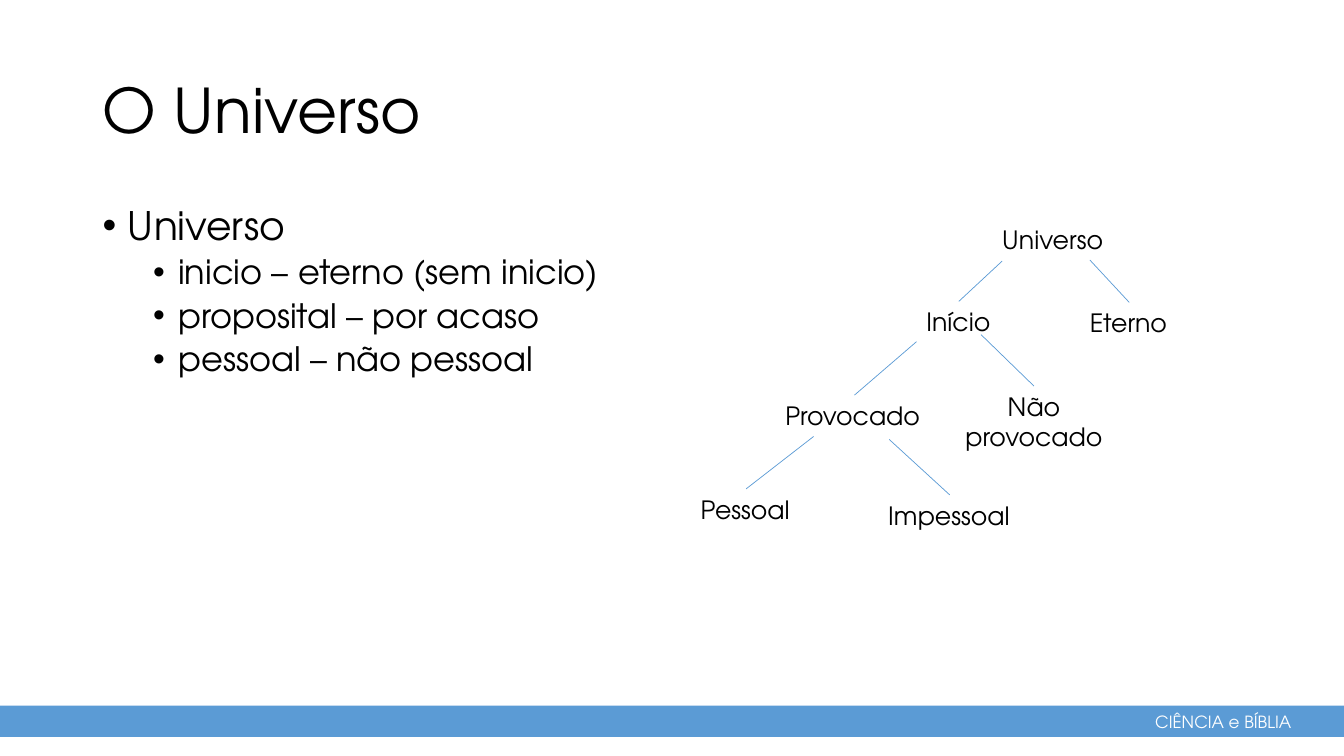
from pptx import Presentation
from pptx.dml.color import RGBColor
from pptx.enum.shapes import MSO_CONNECTOR as CONN, MSO_SHAPE as SHAPE
from pptx.enum.text import MSO_ANCHOR as ANCHOR, MSO_AUTO_SIZE as AUTO, PP_ALIGN as ALIGN
from pptx.oxml.ns import qn
from pptx.util import Inches, Pt
from lxml import etree

BLUE = RGBColor(0x5B, 0x9B, 0xD5)
BLACK = RGBColor(0, 0, 0)
WHITE = RGBColor(0xFF, 0xFF, 0xFF)
FONT = "TeX Gyre Adventor"


def style(p, size, color=BLACK, align=ALIGN.LEFT):
    p.alignment = align
    for r in p.runs:
        r.font.name, r.font.size, r.font.color.rgb = FONT, Pt(size), color


def add_label(text, x, y, w, h, size=18, color=BLACK, align=ALIGN.LEFT):
    sp = slide.shapes.add_textbox(Inches(x), Inches(y), Inches(w), Inches(h))
    tf = sp.text_frame
    tf.word_wrap = False
    tf.auto_size = AUTO.SHAPE_TO_FIT_TEXT
    tf.text = text
    for p in tf.paragraphs:
        style(p, size, color, align)
    return sp


prs = Presentation()
prs.slide_width, prs.slide_height = Inches(13.33), Inches(7.5)
slide = prs.slides.add_slide(prs.slide_layouts[5])

# Footer band
band = slide.shapes.add_shape(SHAPE.RECTANGLE, 0, Inches(7), prs.slide_width, Inches(0.31))
band.shadow.inherit = False
band.fill.solid()
band.fill.fore_color.rgb = BLUE
band.line.fill.background()
add_label("CIÊNCIA e BÍBLIA", 11.36, 7.01, 1.57, 0.3, size=12, color=WHITE)

# Title
title = slide.shapes.title
title.left, title.top, title.width, title.height = (Inches(v) for v in (0.92, 0.4, 11.5, 1.45))
tf = title.text_frame
tf.text = "O Universo"
tf.vertical_anchor = ANCHOR.MIDDLE
tf.paragraphs[0].line_spacing = 0.9
style(tf.paragraphs[0], 44)

# Bullet list: text, level
bullets = [("Universo", 0), ("inicio – eterno (sem inicio)", 1),
           ("proposital – por acaso", 1), ("pessoal – não pessoal", 1)]
body = slide.shapes.add_textbox(Inches(0.92), Inches(2), Inches(7.14), Inches(4.76))
tf = body.text_frame
tf.word_wrap = True
tf.text = "\n".join(text for text, level in bullets)
for p, (text, level) in zip(tf.paragraphs, bullets):
    p.level = level
    p.line_spacing = 0.9
    if level:
        p.space_before = Pt(5)
    pPr = p._p.get_or_add_pPr()
    pPr.set("marL", str(Inches(0.25 + 0.5 * level)))
    pPr.set("indent", str(Inches(-0.25)))
    etree.SubElement(pPr, qn("a:buFont")).set("typeface", "Arial")
    etree.SubElement(pPr, qn("a:buChar")).set("char", "•")
    style(p, 24 if level else 28)

# Tree nodes: text, left, top, width, height
nodes = [
    ("Universo", 9.84, 2.18, 1.22, 0.4),
    ("Início", 9.09, 2.99, 0.84, 0.4),
    ("Eterno", 10.71, 3, 0.98, 0.4),
    ("Provocado", 7.69, 3.92, 1.57, 0.4),
    ("Não\nprovocado", 9.46, 3.83, 1.59, 0.71),
    ("Pessoal", 6.85, 4.85, 1.1, 0.4),
    ("Impessoal", 8.71, 4.91, 1.42, 0.4),
]
tree = {}
for text, *box in nodes:
    tree[text] = add_label(text, *box, align=ALIGN.CENTER if "\n" in text else ALIGN.LEFT)

# Branches: start point, child node joined at its top
branches = [
    (9.94, 2.59, "Início"), (10.81, 2.58, "Eterno"),
    (9.09, 3.39, "Provocado"), (9.73, 3.32, "Não\nprovocado"),
    (8.07, 4.33, "Pessoal"), (8.82, 4.36, "Impessoal"),
]
for x, y, child in branches:
    line = slide.shapes.add_connector(CONN.STRAIGHT, Inches(x), Inches(y), Inches(x), Inches(y))
    line.end_connect(tree[child], 0)
    line.line.color.rgb = BLUE
    line.line.width = Pt(0.5)
    etree.SubElement(line._element.spPr, qn("a:effectLst"))

prs.save("out.pptx")
